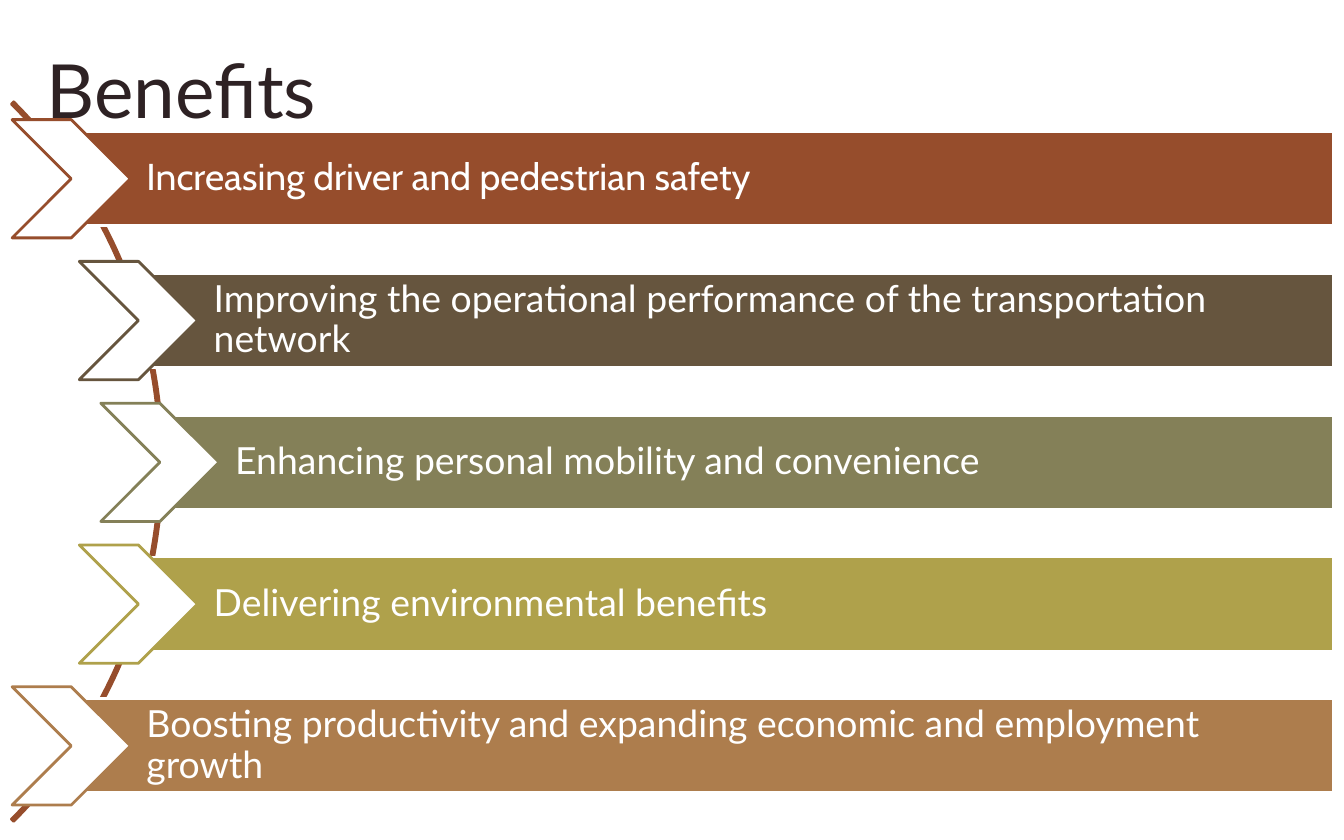
from dataclasses import dataclass

from pptx import Presentation
from pptx.dml.color import RGBColor
from pptx.enum.shapes import MSO_SHAPE as Preset
from pptx.enum.text import MSO_ANCHOR as Anchor, PP_ALIGN as Align
from pptx.util import Inches, Pt

WHITE = "FFFFFF"
RUST = "964D2C"
BAR_RIGHT = 9.92
BAR_HEIGHT = 0.7
FIRST_BAR_TOP = 0.98
BAR_PITCH = 1.055
CHEVRON_SIZE = 0.88


@dataclass
class Benefit:
    text: str
    left: float
    color: str
    font: str = "Lato"


BENEFITS = [
    Benefit("Increasing driver and pedestrian safety", 0.53, RUST, "Cabin"),
    Benefit("Improving the operational performance of the transportation network", 1.03, "66553E"),
    Benefit("Enhancing personal mobility and convenience", 1.19, "848058"),
    Benefit("Delivering environmental benefits", 1.03, "AFA14B"),
    Benefit("Boosting productivity and expanding economic and employment growth", 0.53, "AD7D4D"),
]


def rgb(value: str) -> RGBColor:
    return RGBColor.from_string(value)


def add_preset(slide, preset, left: float, top: float, width: float, height: float,
               line: str, fill: str | None = None):
    shape = slide.shapes.add_shape(preset, Inches(left), Inches(top), Inches(width), Inches(height))
    shape.shadow.inherit = False
    if fill:
        shape.fill.solid()
        shape.fill.fore_color.rgb = rgb(fill)
    else:
        shape.fill.background()
    shape.line.color.rgb = rgb(line)
    shape.line.width = Pt(1.5)
    return shape


def write_text(shape, text: str, *, size: float, font: str, color: str,
               anchor=Anchor.TOP, margins=(0.1, 0.05, 0.1, 0.05), spacing: float = 1.0) -> None:
    frame = shape.text_frame
    frame.word_wrap = True
    frame.vertical_anchor = anchor
    frame.margin_left, frame.margin_top, frame.margin_right, frame.margin_bottom = map(Inches, margins)
    paragraph = frame.paragraphs[0]
    paragraph.alignment = Align.LEFT
    paragraph.line_spacing = spacing
    run = paragraph.add_run()
    run.text = text
    run.font.size = Pt(size)
    run.font.name = font
    run.font.color.rgb = rgb(color)


def add_benefit(slide, benefit: Benefit, top: float) -> None:
    bar = add_preset(slide, Preset.RECTANGLE, benefit.left, top,
                     BAR_RIGHT - benefit.left, BAR_HEIGHT, WHITE, benefit.color)
    write_text(bar, benefit.text, size=20, font=benefit.font, color=WHITE,
               anchor=Anchor.MIDDLE, margins=(0.56, 0.06, 0.06, 0.06), spacing=0.9)
    # The chevron is centred on the left edge of the bar
    add_preset(slide, Preset.CHEVRON, benefit.left - CHEVRON_SIZE / 2,
               top + (BAR_HEIGHT - CHEVRON_SIZE) / 2,
               CHEVRON_SIZE, CHEVRON_SIZE, benefit.color, WHITE)


def main() -> None:
    presentation = Presentation()
    presentation.slide_width = Inches(10)
    presentation.slide_height = Inches(6.25)
    slide = presentation.slides.add_slide(presentation.slide_layouts[6])

    # Arc behind the bars, from 315 to 45 degrees
    arc = add_preset(slide, Preset.BLOCK_ARC, -6.36, -0.35, 7.57, 7.57, RUST)
    for index, value in enumerate((189, 27, 0.003)):
        arc.adjustments[index] = value

    # Benefit bars
    for index, benefit in enumerate(BENEFITS):
        add_benefit(slide, benefit, FIRST_BAR_TOP + index * BAR_PITCH)

    # Title
    title = slide.shapes.add_textbox(Inches(0.25), Inches(0.28), Inches(9.33), Inches(0.77))
    write_text(title, "Benefits", size=40, font="Lato", color="2E2224")

    presentation.save("out.pptx")


if __name__ == "__main__":
    main()
